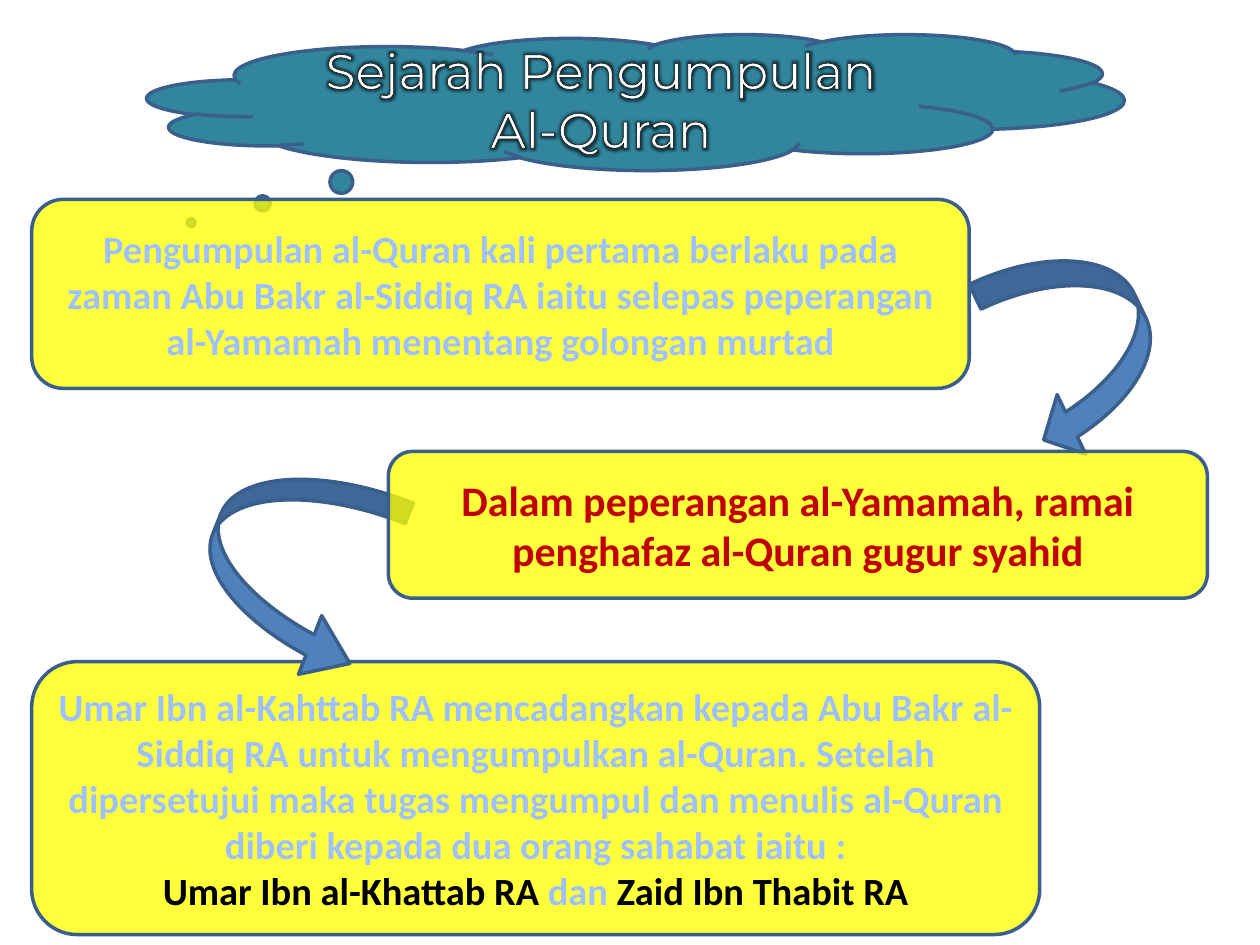
from lxml import etree
from pptx import Presentation
from pptx.dml.color import RGBColor
from pptx.enum.shapes import MSO_SHAPE
from pptx.enum.text import MSO_ANCHOR, PP_ALIGN
from pptx.oxml import parse_xml
from pptx.oxml.ns import qn
from pptx.util import Cm, Pt

WHITE = RGBColor(0xFF, 0xFF, 0xFF)
BLACK = RGBColor(0x00, 0x00, 0x00)
RED = RGBColor(0xC0, 0x00, 0x00)
YELLOW = RGBColor(0xFF, 0xFF, 0x00)
TEAL = RGBColor(0x31, 0x85, 0x9C)
BLUE = RGBColor(0x4F, 0x81, 0xBD)
NAVY = RGBColor(0x3A, 0x5F, 0x8C)
PALE = RGBColor(0xBF, 0xD3, 0xF9)
SKY = RGBColor(0xA0, 0xC1, 0xFF)
DEEP = RGBColor(0x00, 0x3D, 0x85)
SHINE = [(0, PALE), (9, SKY), (50, DEEP), (79, SKY), (100, PALE)]

NS = 'xmlns:a="http://schemas.openxmlformats.org/drawingml/2006/main"'
TITLE = {"size": Pt(28), "name": "Montserrat"}
BODY = {"size": Pt(22), "name": "Calibri", "bold": True}
LARGE = {**BODY, "size": Pt(24)}


def add_outline(r, width):
    r.font._element.insert(0, parse_xml(
        f'<a:ln {NS} w="{Pt(width)}"><a:solidFill>'
        f'<a:srgbClr val="{BLACK}"/></a:solidFill></a:ln>'))


def add_gradient(r, stops):
    marks = "".join(f'<a:gs pos="{pos * 1000}"><a:srgbClr val="{color}"/></a:gs>'
                    for pos, color in stops)
    r.font._element.insert(0, parse_xml(
        f'<a:gradFill {NS}><a:gsLst>{marks}</a:gsLst>'
        f'<a:lin ang="5400000" scaled="0"/></a:gradFill>'))


def add_glow(r):
    r.font._element.insert(2, parse_xml(
        f'<a:effectLst {NS}><a:glow rad="{Pt(4)}"><a:srgbClr val="{BLACK}">'
        f'<a:alpha val="60000"/></a:srgbClr></a:glow></a:effectLst>'))


def add_shape(s, kind, box, fill, adjustments=()):
    sp = s.shapes.add_shape(kind, *(Cm(v) for v in box))
    sp.shadow.inherit = False
    sp.fill.solid()
    sp.fill.fore_color.rgb = fill
    sp.line.color.rgb = NAVY
    sp.line.width = Pt(2)
    for i, value in enumerate(adjustments):
        sp.adjustments[i] = value
    return sp


def add_text(sp, paragraphs, fmt, outline):
    tf = sp.text_frame
    tf.word_wrap = True
    tf.vertical_anchor = MSO_ANCHOR.MIDDLE
    for i, runs in enumerate(paragraphs):
        p = tf.add_paragraph() if i else tf.paragraphs[0]
        p.alignment = PP_ALIGN.CENTER
        for text, color in runs:
            r = p.add_run()
            r.text = text
            for key, value in fmt.items():
                setattr(r.font, key, value)
            if color is SHINE:
                add_gradient(r, color)
            else:
                r.font.color.rgb = color
            add_outline(r, outline)


def cloud_title(s, box, text):
    sp = add_shape(s, MSO_SHAPE.CLOUD_CALLOUT, box, TEAL, (-0.455, 0.887))
    add_text(sp, [[(text, WHITE)]], TITLE, 0.75)
    add_glow(sp.text_frame.paragraphs[0].runs[0])


def event_box(s, box, paragraphs, fmt=BODY):
    sp = add_shape(s, MSO_SHAPE.ROUNDED_RECTANGLE, box, YELLOW)
    color = sp._element.spPr.find(qn("a:solidFill"))[0]
    etree.SubElement(color, qn("a:alpha")).set("val", "77000")
    add_text(sp, paragraphs, fmt, 0.83)


def curved_arrow(s, kind, box, adjustments, rotation):
    add_shape(s, kind, box, BLUE, adjustments).rotation = rotation


def main():
    prs = Presentation()
    prs.slide_width, prs.slide_height = Cm(25.4), Cm(19.05)
    s = prs.slides.add_slide(prs.slide_layouts[6])

    curved_arrow(s, MSO_SHAPE.CURVED_LEFT_ARROW, (20.29, 4.9, 2.92, 4.14),
                 (0.189, 0.456, 0.219), 334.4)
    cloud_title(s, (2.97, 0.69, 19.69, 2.74), "Sejarah Pengumpulan Al-Quran")
    event_box(s, (0.64, 4.02, 18.9, 3.81), [[(
        "Pengumpulan al-Quran kali pertama berlaku pada zaman Abu Bakr "
        "al-Siddiq RA iaitu selepas peperangan al-Yamamah menentang "
        "golongan murtad", SHINE)]])
    event_box(s, (0.64, 13.34, 20.32, 5.5), [
        [("Umar Ibn al-Kahttab RA mencadangkan kepada Abu Bakr al-Siddiq RA "
          "untuk mengumpulkan al-Quran. Setelah dipersetujui maka tugas "
          "mengumpul dan menulis al-Quran diberi kepada dua orang sahabat "
          "iaitu :", SHINE)],
        [("Umar Ibn al-Khattab RA ", BLACK), ("dan ", SHINE),
         ("Zaid Ibn Thabit RA", BLACK)]])
    curved_arrow(s, MSO_SHAPE.CURVED_RIGHT_ARROW, (4.17, 9.35, 3.53, 4.11),
                 (0.126, 0.36, 0.25), 21.6)
    event_box(s, (7.83, 9.1, 16.51, 2.96), [[(
        "Dalam peperangan al-Yamamah, ramai penghafaz al-Quran gugur syahid",
        RED)]], LARGE)

    prs.save("out.pptx")


if __name__ == "__main__":
    main()
